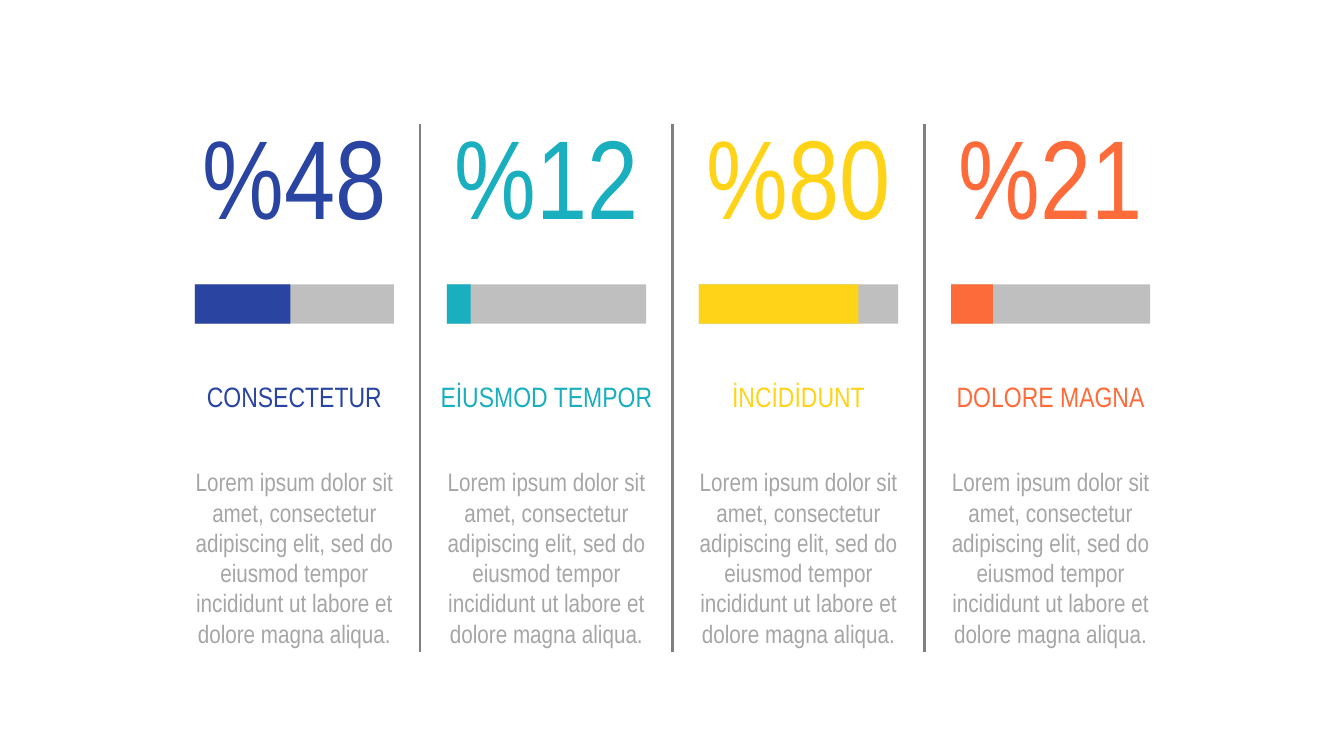
from pptx import Presentation
from pptx.dml.color import RGBColor
from pptx.enum.shapes import MSO_CONNECTOR, MSO_SHAPE
from pptx.enum.text import MSO_ANCHOR, MSO_AUTO_SIZE, PP_ALIGN
from pptx.oxml.ns import qn
from pptx.util import Inches, Pt
from lxml import etree

STRAIGHT = MSO_CONNECTOR.STRAIGHT
RECTANGLE = MSO_SHAPE.RECTANGLE
MIDDLE = MSO_ANCHOR.MIDDLE
GROW = MSO_AUTO_SIZE.SHAPE_TO_FIT_TEXT
CENTER = PP_ALIGN.CENTER

NAVY = RGBColor(0x29, 0x44, 0xA1)
TEAL = RGBColor(0x19, 0xAF, 0xBF)
YELLOW = RGBColor(0xFF, 0xD4, 0x18)
ORANGE = RGBColor(0xFE, 0x6B, 0x3A)
DIVIDER_GRAY = RGBColor(0x80, 0x80, 0x80)
TRACK_GRAY = RGBColor(0xBF, 0xBF, 0xBF)
BODY_GRAY = RGBColor(0xA6, 0xA6, 0xA6)

DESCRIPTION = (
    "Lorem ipsum dolor sit amet, consectetur adipiscing elit, sed do "
    "eiusmod tempor incididunt ut labore et dolore magna aliqua."
)
INDICATORS = [
    (48, "CONSECTETUR", NAVY),
    (12, "EİUSMOD TEMPOR", TEAL),
    (80, "İNCİDİDUNT", YELLOW),
    (21, "DOLORE MAGNA", ORANGE),
]
TRACK_WIDTH = 0.79
TRACK_INSET = (1 - TRACK_WIDTH) / 2


class IndicatorSlide:
    """Draws on a grid of 2.5-inch columns and half-inch rows in one font."""

    font = "Arial Narrow"
    left = 1.67
    column_width = 2.5
    row_height = 0.5

    def __init__(self, slide):
        self.slide = slide

    def x(self, column):
        return Inches(self.left + column * self.column_width)

    def y(self, row):
        return Inches(row * self.row_height)

    def box(self, column, row, columns, rows):
        return (self.x(column), self.y(row),
                Inches(columns * self.column_width), self.y(rows))

    def text(self, words, column, row, rows, *, size, color, side_inset=0.1):
        frame = self.slide.shapes.add_textbox(
            *self.box(column, row, 1, rows)).text_frame
        frame.word_wrap = True
        frame.auto_size = GROW
        frame.vertical_anchor = MIDDLE
        frame.margin_left = frame.margin_right = Inches(side_inset)
        paragraph = frame.paragraphs[0]
        paragraph.alignment = CENTER
        run = paragraph.add_run()
        run.text = words
        run.font.name = self.font
        run.font.size = Pt(size)
        run.font.color.rgb = color

    def bar(self, column, row, columns, rows, color):
        bar = self.slide.shapes.add_shape(
            RECTANGLE, *self.box(column, row, columns, rows))
        bar.shadow.inherit = False
        bar.fill.solid()
        bar.fill.fore_color.rgb = color
        bar.line.fill.background()

    def divider(self, column, top, bottom):
        divider = self.slide.shapes.add_connector(
            STRAIGHT, self.x(column), self.y(top),
            self.x(column), self.y(bottom))
        divider.line.color.rgb = DIVIDER_GRAY
        divider.line.width = Pt(1.5)
        etree.SubElement(divider.element.spPr, qn("a:effectLst"))

    def indicator(self, column, percent, heading, color):
        self.text(f"%{percent}", column, 2.02, 2.9, size=80, color=color)
        self.text(DESCRIPTION, column, 9.14, 3.84, size=18,
                  color=BODY_GRAY, side_inset=0.2)
        for share, fill in ((1, TRACK_GRAY), (percent / 100, color)):
            self.bar(column + TRACK_INSET, 5.64, TRACK_WIDTH * share, 0.78, fill)
        self.text(heading, column, 7.42, 0.88, size=20, color=color)


def main():
    presentation = Presentation()
    presentation.slide_width = Inches(13.33)
    presentation.slide_height = Inches(7.5)
    blank_layout = presentation.slide_layouts[6]
    board = IndicatorSlide(presentation.slides.add_slide(blank_layout))
    for column in range(1, len(INDICATORS)):
        board.divider(column, 2.46, 12.94)
    for column, (percent, heading, color) in enumerate(INDICATORS):
        board.indicator(column, percent, heading, color)
    presentation.save("out.pptx")


if __name__ == "__main__":
    main()
